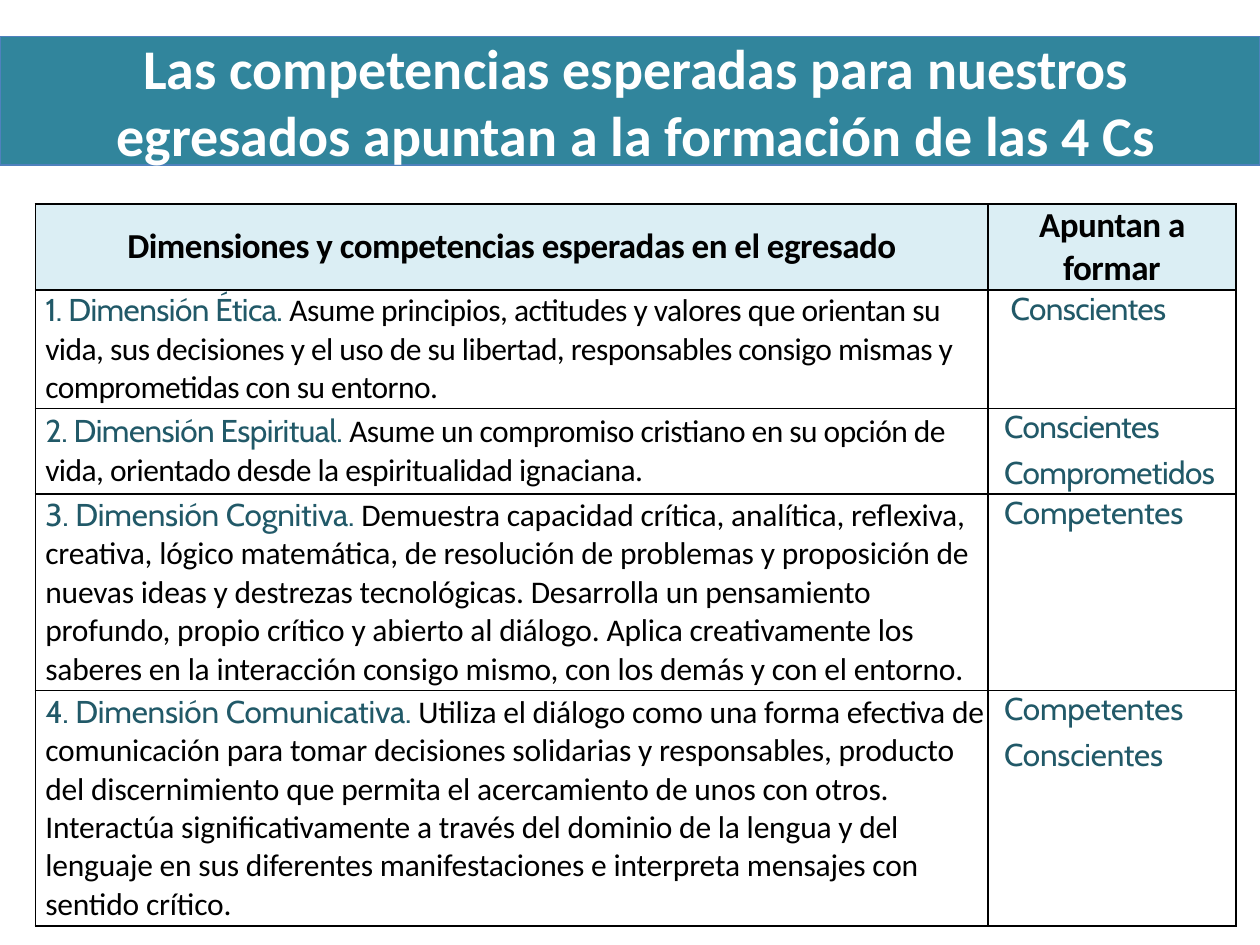
from lxml import etree
from pptx import Presentation
from pptx.dml.color import RGBColor
from pptx.enum.text import MSO_ANCHOR as Anchor, MSO_AUTO_SIZE as AutoSize, PP_ALIGN as Align
from pptx.oxml.ns import qn
from pptx.util import Inches, Pt

COLORS = {
    "band": "31859C", "band_line": "4F81BD", "header": "DBEEF4",
    "accent": "215968", "text": "000000", "white": "FFFFFF",
}
TITLE = ("Las competencias esperadas para nuestros egresados "
         "apuntan a la formación de las 4 Cs")
HEADERS = ["Dimensiones y competencias esperadas en el egresado", "Apuntan a formar"]
# Dimension, competence, graduate profiles, letter spacing (hundredths of a point)
DIMENSIONS = [
    ("1. Dimensión Ética. ",
     "Asume principios, actitudes y valores que orientan su vida, sus decisiones y el uso "
     "de su libertad, responsables consigo mismas y comprometidas con su entorno.",
     [" Conscientes"], -30),
    ("2. Dimensión Espiritual. ",
     "Asume un compromiso cristiano en su opción de vida, orientado desde la "
     "espiritualidad ignaciana.",
     ["Conscientes", "Comprometidos"], -30),
    ("3. Dimensión Cognitiva. ",
     "Demuestra capacidad crítica, analítica, reflexiva, creativa, lógico matemática, de "
     "resolución de problemas y proposición de nuevas ideas y destrezas tecnológicas. "
     "Desarrolla un pensamiento profundo, propio crítico y abierto al diálogo. Aplica "
     "creativamente los saberes en la interacción consigo mismo, con los demás y con el "
     "entorno.",
     ["Competentes"], -10),
    ("4. Dimensión Comunicativa. ",
     "Utiliza el diálogo como una forma efectiva de comunicación para tomar decisiones "
     "solidarias y responsables, producto del discernimiento que permita el acercamiento "
     "de unos con otros. Interactúa significativamente a través del dominio de la lengua "
     "y del lenguaje en sus diferentes manifestaciones e interpreta mensajes con sentido "
     "crítico.",
     ["Competentes", "Conscientes"], -10),
]
COLUMN_WIDTHS = [7.56, 1.97]
ROW_HEIGHTS = [0.68, 0.94, 0.68, 1.56, 1.87]

# Font formats
TITLE_FONT = {"name": "Calibri", "size": Pt(32), "bold": True, "color": "white"}
HEADER_FONT = {"name": "Calibri", "size": Pt(20), "bold": True, "color": "text"}
BODY_FONT = {"name": "Calibri", "size": Pt(18), "bold": False, "color": "text"}
ACCENT_FONT = {**BODY_FONT, "name": "Cabin", "color": "accent"}

CELL_FORMAT = {
    "margin_left": Inches(0.03), "margin_right": Inches(0.03),
    "margin_top": 0, "margin_bottom": 0,
}


def apply(target, values):
    for name, value in values.items():
        setattr(target, name, value)


def rgb(key):
    return RGBColor.from_string(COLORS[key])


class SlideBuilder:
    """Holds the style and the current slide."""

    def __init__(self, slide):
        self.slide = slide

    def paragraph(self, paragraph, runs, align=Align.LEFT, indent=0, gap=2, spacing=0):
        apply(paragraph, {"alignment": align, "space_before": Pt(gap), "space_after": Pt(gap)})
        properties = paragraph._p.get_or_add_pPr()
        properties.set("marL", str(Inches(indent)))
        properties.set("indent", "0")
        for text, font in runs:
            run = paragraph.add_run()
            run.text = text
            apply(run.font, {k: v for k, v in font.items() if k != "color"})
            run.font.color.rgb = rgb(font["color"])
            if spacing:
                run.font._element.set("spc", str(spacing))

    def title(self, text, left, top, width, height):
        band = self.slide.shapes.title
        apply(band, {"left": Inches(left), "top": Inches(top),
                     "width": Inches(width), "height": Inches(height)})
        band.fill.solid()
        band.fill.fore_color.rgb = rgb("band")
        band.line.color.rgb = rgb("band_line")
        band.line.width = Pt(0.75)
        frame = band.text_frame
        apply(frame, {"word_wrap": True, "auto_size": AutoSize.NONE,
                      "vertical_anchor": Anchor.MIDDLE})
        self.paragraph(frame.paragraphs[0], [(text, TITLE_FONT)], Align.CENTER, 0.1, gap=6)

    def table(self, left, top, widths, heights):
        table = self.slide.shapes.add_table(
            len(heights), len(widths), Inches(left), Inches(top),
            Inches(sum(widths)), Inches(sum(heights))).table
        apply(table, {"first_row": False, "horz_banding": False})
        for column, width in zip(table.columns, widths):
            column.width = Inches(width)
        for row, height in zip(table.rows, heights):
            row.height = Inches(height)
        return table

    def borders(self, cell):
        properties = cell._tc.get_or_add_tcPr()
        for index, side in enumerate(("lnL", "lnR", "lnT", "lnB")):
            line = etree.Element(qn(f"a:{side}"), w=str(Pt(1)))
            fill = etree.SubElement(line, qn("a:solidFill"))
            etree.SubElement(fill, qn("a:srgbClr"), val=COLORS["text"])
            properties.insert(index, line)

    def cell(self, cell, paragraphs, anchor, fill=None, **style):
        apply(cell, {**CELL_FORMAT, "vertical_anchor": anchor})
        if fill:
            cell.fill.solid()
            cell.fill.fore_color.rgb = rgb(fill)
        else:
            cell.fill.background()
        self.borders(cell)
        frame = cell.text_frame
        for index, runs in enumerate(paragraphs):
            paragraph = frame.add_paragraph() if index else frame.paragraphs[0]
            self.paragraph(paragraph, runs, **style)


def main():
    presentation = Presentation()
    apply(presentation, {"slide_width": Inches(10), "slide_height": Inches(7.5)})
    builder = SlideBuilder(presentation.slides.add_slide(presentation.slide_layouts[5]))

    # Competence table
    competences = builder.table(0.28, 1.62, COLUMN_WIDTHS, ROW_HEIGHTS)
    for column, header in enumerate(HEADERS):
        builder.cell(competences.cell(0, column), [[(header, HEADER_FONT)]], Anchor.MIDDLE,
                     fill="header", align=Align.CENTER, spacing=-30)
    for row, (dimension, competence, profiles, spacing) in enumerate(DIMENSIONS, start=1):
        builder.cell(competences.cell(row, 0),
                     [[(dimension, ACCENT_FONT), (competence, BODY_FONT)]],
                     Anchor.MIDDLE, indent=0.05, spacing=spacing)
        builder.cell(competences.cell(row, 1),
                     [[(profile, ACCENT_FONT)] for profile in profiles],
                     Anchor.TOP, indent=0.1, spacing=spacing)

    # Title band
    builder.title(TITLE, 0, 0.29, 10, 1.02)

    presentation.save("out.pptx")


if __name__ == "__main__":
    main()
